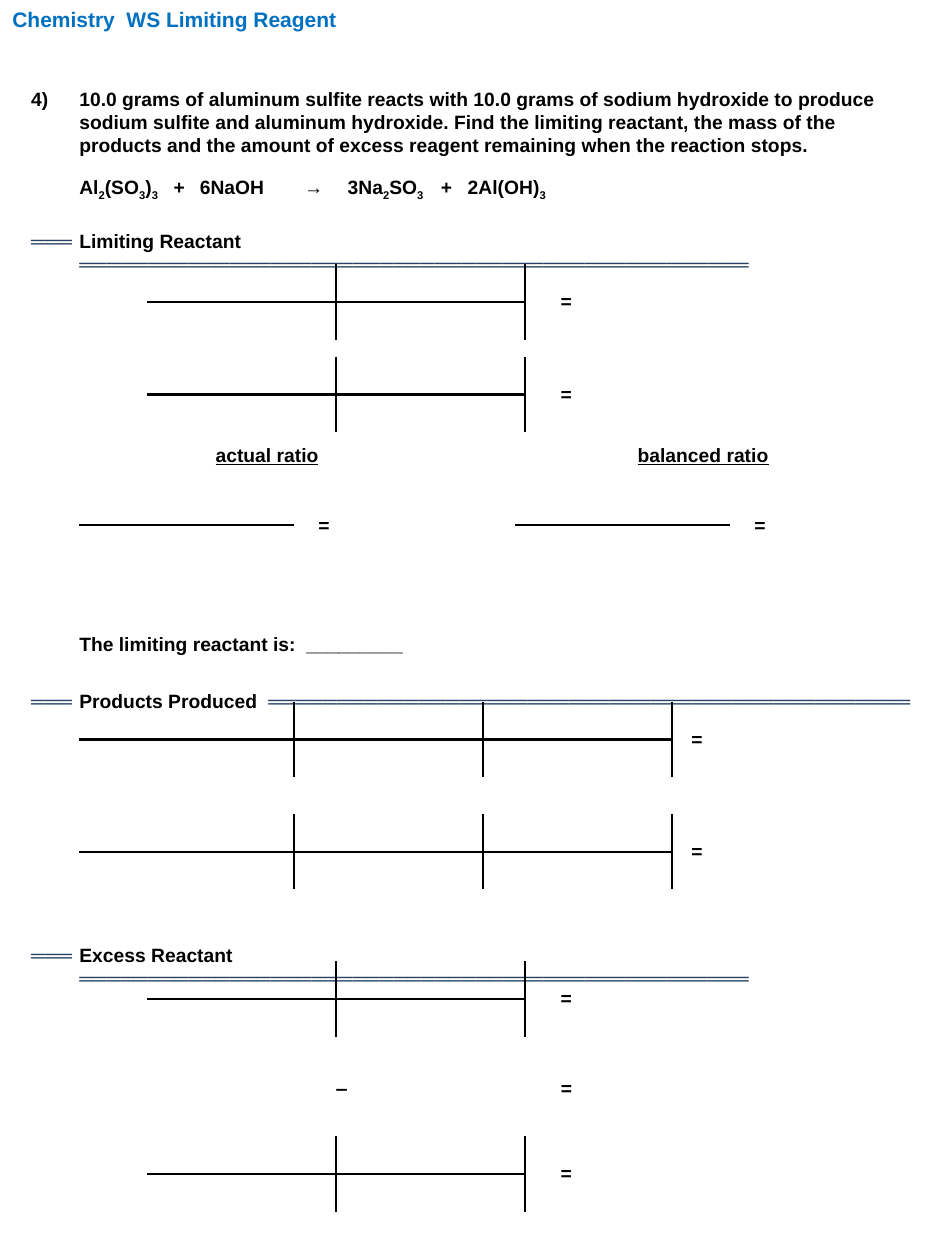
import itertools

import lxml.etree
import pptx
import pptx.dml.color
import pptx.enum.text
import pptx.oxml.ns
import pptx.util

Cm = pptx.util.Cm
Pt = pptx.util.Pt
qn = pptx.oxml.ns.qn
BLACK = pptx.dml.color.RGBColor(0x00, 0x00, 0x00)
NAVY = pptx.dml.color.RGBColor(0x25, 0x40, 0x61)
BLUE = pptx.dml.color.RGBColor(0x00, 0x70, 0xC0)
MIDDLE = pptx.enum.text.MSO_ANCHOR.MIDDLE
CENTER = pptx.enum.text.PP_ALIGN.CENTER
NO_STYLE = "{2D5ABB26-0587-4C30-8999-92F81FD0307C}"
BODY_FORMAT = {"name": "Arial", "size": Pt(11), "bold": True}


def add_run(paragraph, text, color=BLACK, **changes):
    run = paragraph.add_run()
    run.text = text
    for name, value in (BODY_FORMAT | changes).items():
        setattr(run.font, name, value)
    run.font.color.rgb = color
    return run


def set_tab_stops(paragraph, stops):
    properties = paragraph._p.get_or_add_pPr()
    tab_list = lxml.etree.SubElement(properties, qn("a:tabLst"))
    for stop in stops:
        lxml.etree.SubElement(tab_list, qn("a:tab"), pos=str(Cm(stop)), algn="l")


presentation = pptx.Presentation()
presentation.slide_width = Cm(19.05)
presentation.slide_height = Cm(25.4)
slide = presentation.slides.add_slide(presentation.slide_layouts[6])

RULE = "═"
EQUATION = "\tAl~2~(SO~3~)~3~\t+\t6NaOH\t→\t3Na~2~SO~3~\t+\t2Al(OH)~3~"
EQUATION_STOPS = [0.97, 2.87, 3.4, 5.5, 6.38, 8.26, 8.8]
body_paragraphs = [
    ("4)\t10.0 grams of aluminum sulfite reacts with 10.0 grams of sodium hydroxide "
     "to produce sodium sulfite and aluminum hydroxide. Find the limiting reactant, "
     "the mass of the products and the amount of excess reagent remaining when the "
     "reaction stops.", 0),
    (EQUATION, 13.1),
    (RULE * 3 + "\tLimiting Reactant " + RULE * 49, 15.4),
    ("\tThe limiting reactant is:  _________", 204),
    (RULE * 3 + "\tProducts Produced  " + RULE * 47, 19.4),
    (RULE * 3 + "\tExcess Reactant  " + RULE * 49, 132),
]

body = slide.shapes.add_textbox(Cm(0.38), Cm(1.63), Cm(18.29), Cm(22.68))
body.text_frame.word_wrap = True
for index, (text, gap) in enumerate(body_paragraphs):
    paragraph = body.text_frame.paragraphs[0] if index == 0 else body.text_frame.add_paragraph()
    paragraph.line_spacing = Pt(13.14)
    paragraph.space_before = Pt(gap)
    if text == EQUATION:
        set_tab_stops(paragraph, EQUATION_STOPS)
        for position, part in enumerate(text.split("~")):
            if part:
                run = add_run(paragraph, part)
                if position % 2:
                    run.font._element.set("baseline", "-25000")
        continue
    properties = paragraph._p.get_or_add_pPr()
    properties.set("marL", str(Cm(0.97)))
    properties.set("indent", str(-Cm(0.97)))
    for is_rule, letters in itertools.groupby(text, lambda letter: letter == RULE):
        add_run(paragraph, "".join(letters), NAVY if is_rule else BLACK, bold=not is_rule)

CROSS = [3.81, 3.81, 1.65]
RATIO = [4.32, 1.22, 2.03]
CHAIN = [4.32, 3.81, 3.81, 1.02]
tables = [
    (2.97, 5.33, CROSS + [4.32], None),
    (2.97, 7.19, CROSS + [3.81], None),
    (1.6, 8.81, RATIO, "actual ratio"),
    (10.39, 8.81, RATIO, "balanced ratio"),
    (1.6, 14.15, CHAIN + [3.05], None),
    (1.6, 16.41, CHAIN + [3.3], None),
    (2.97, 19.38, CROSS + [6.35], None),
    (2.97, 22.91, CROSS + [6.6], None),
]

for left, top, widths, heading in tables:
    heights = [0.76, 1.02, 1.02] if heading else [0.76, 0.76]
    upper = len(heights) - 2
    factors = len(widths) - 2
    frame = slide.shapes.add_table(len(heights), len(widths), Cm(left), Cm(top),
                                   Cm(sum(widths)), Cm(sum(heights)))
    table = frame.table
    table.first_row = False
    table.horz_banding = False
    table._tbl.tblPr.find(qn("a:tableStyleId")).text = NO_STYLE
    for column, width in zip(table.columns, widths):
        column.width = Cm(width)
    for row, height in zip(table.rows, heights):
        row.height = Cm(height)

    texts = {(upper, factors): "="}
    if heading:
        texts[0, 0] = heading
        table.cell(0, 0).merge(table.cell(0, len(widths) - 1))
    for column_index in (factors, factors + 1):
        table.cell(upper, column_index).merge(table.cell(upper + 1, column_index))

    for row_index, column_index in itertools.product(range(len(heights)), range(len(widths))):
        cell = table.cell(row_index, column_index)
        cell.fill.background()
        cell.vertical_anchor = MIDDLE
        paragraph = cell.text_frame.paragraphs[0]
        paragraph.alignment = CENTER
        if (row_index, column_index) in texts:
            text = texts[row_index, column_index]
            add_run(paragraph, text, underline=text == heading)
        else:
            paragraph._p.get_or_add_endParaRPr().set("sz", "1100")
        if row_index < upper or column_index >= factors:
            continue
        sides = {
            "a:lnL": column_index > 0,
            "a:lnR": column_index < factors - 1,
            "a:lnT": row_index > upper,
            "a:lnB": row_index == upper,
        }
        drawn_sides = [side for side, drawn in sides.items() if drawn]
        for position, side in enumerate(drawn_sides):
            line = lxml.etree.Element(qn(side), w=str(Pt(1.5)))
            fill = lxml.etree.SubElement(line, qn("a:solidFill"))
            lxml.etree.SubElement(fill, qn("a:srgbClr"), val=str(BLACK))
            cell._tc.get_or_add_tcPr().insert(position, line)

subtraction = slide.shapes.add_textbox(Cm(3.43), Cm(21.16), Cm(10.26), Cm(1.52))
subtraction.text_frame.word_wrap = True
subtraction.text_frame.vertical_anchor = MIDDLE
set_tab_stops(subtraction.text_frame.paragraphs[0], [3.1, 7.63])
add_run(subtraction.text_frame.paragraphs[0], "\t‒\t=")

title = slide.shapes.add_textbox(Cm(0), Cm(0), Cm(14.45), Cm(0.89))
title.text_frame.word_wrap = True
add_run(title.text_frame.paragraphs[0], "Chemistry  WS Limiting Reagent", BLUE, size=Pt(12))

presentation.save("out.pptx")
